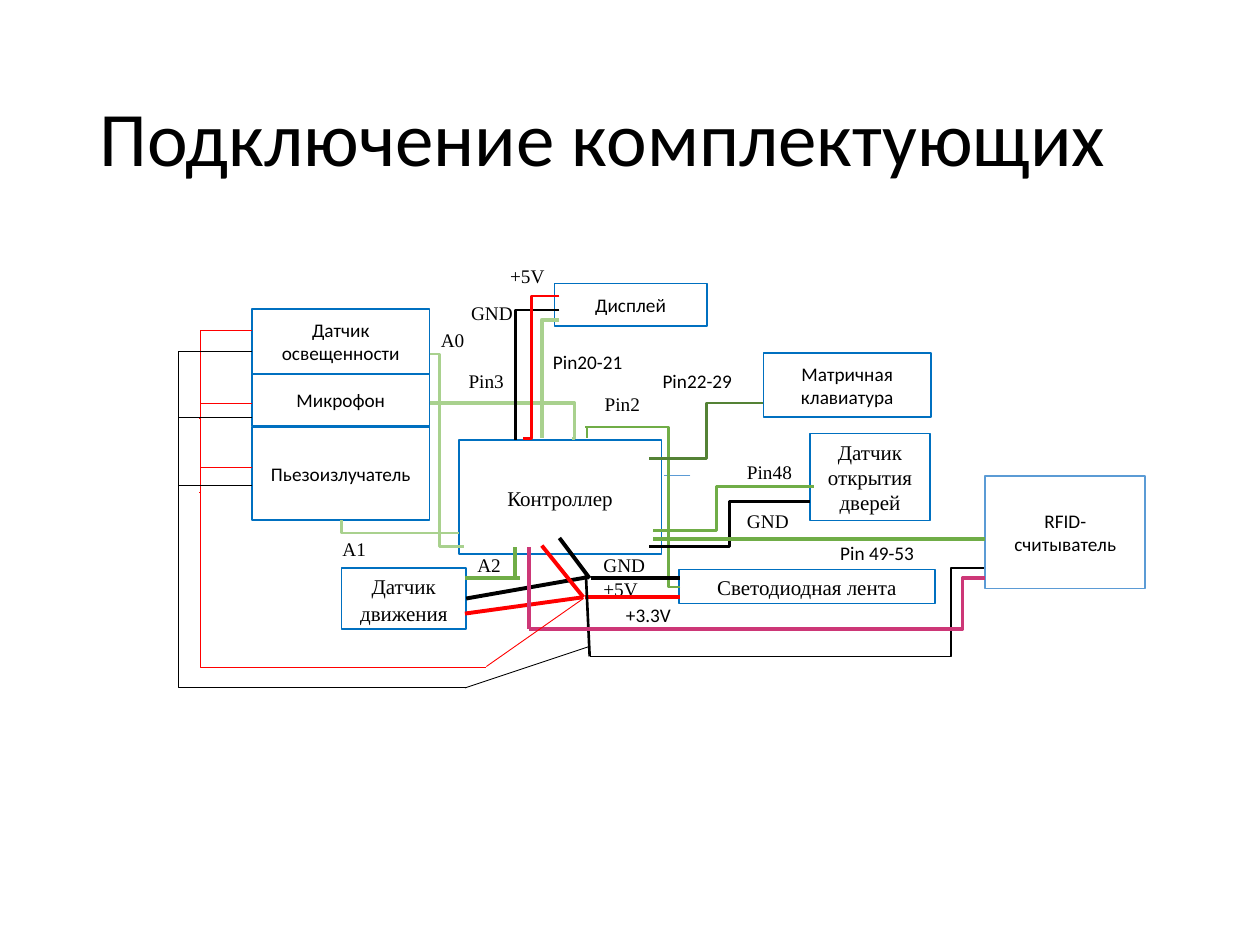
from dataclasses import dataclass

from lxml import etree
from pptx import Presentation
from pptx.dml.color import RGBColor
from pptx.enum.shapes import MSO_CONNECTOR, MSO_SHAPE
from pptx.enum.text import MSO_ANCHOR, MSO_AUTO_SIZE, PP_ALIGN
from pptx.oxml.ns import qn
from pptx.util import Inches, Pt

STRAIGHT, ELBOW = MSO_CONNECTOR.STRAIGHT, MSO_CONNECTOR.ELBOW
RECTANGLE = MSO_SHAPE.RECTANGLE
MIDDLE, TOP = MSO_ANCHOR.MIDDLE, MSO_ANCHOR.TOP
LEFT, CENTER = PP_ALIGN.LEFT, PP_ALIGN.CENTER
NO_AUTOFIT = MSO_AUTO_SIZE.NONE
RIGHT_SIDE = 3
COLUMNS, ROWS = 100, 75


@dataclass(frozen=True)
class Theme:
    """Colours, fonts and type sizes of the wiring diagram."""
    sans: str = "Calibri"
    serif: str = "Times New Roman"
    title: float = 44
    large: float = 12
    small: float = 11
    black: str = "000000"
    white: str = "FFFFFF"
    red: str = "FF0000"
    pink: str = "CD3777"
    green: str = "70AD47"
    light_green: str = "A9D18E"
    dark_green: str = "548235"
    blue: str = "0070C0"
    pale_blue: str = "5B9BD5"


THEME = Theme()
SANS, SERIF = THEME.sans, THEME.serif
LARGE, SMALL = THEME.large, THEME.small
BLACK, RED, PINK = THEME.black, THEME.red, THEME.pink
GREEN, LIGHT, DARK = THEME.green, THEME.light_green, THEME.dark_green

# name, (left, top, width, height), font, size, loose spacing, outline
BOXES = [
    ("Контроллер", (36.4, 34.9, 16.1, 9.1), SERIF, LARGE, True, THEME.blue),
    ("Светодиодная лента", (53.9, 45.2, 20.3, 2.7), SERIF, LARGE, True, THEME.blue),
    ("Датчик движения", (27.1, 45.1, 9.9, 4.8), SERIF, LARGE, True, THEME.blue),
    ("Датчик открытия дверей", (64.3, 34.4, 9.5, 6.9), SERIF, LARGE, False, THEME.blue),
    ("RFID-считыватель", (78.2, 37.8, 12.7, 8.9), SANS, SMALL, False, THEME.pale_blue),
    ("Матричная клавиатура", (60.6, 28, 13.3, 5.1), SANS, SMALL, False, THEME.blue),
    ("Микрофон", (20, 29.7, 14.1, 4.1), SANS, SMALL, False, THEME.blue),
    ("Пьезоизлучатель", (20, 33.9, 14.1, 7.4), SANS, SMALL, False, THEME.blue),
    ("Датчик освещенности", (20, 24.5, 14.1, 5.2), SANS, SMALL, False, THEME.blue),
    ("Дисплей", (44, 22.5, 12.1, 3.4), SANS, SMALL, False, THEME.blue),
]

LABELS = [
    ("Pin2", (47, 30.5, 6.1, 2.7), SERIF, True),
    ("GND", (46.9, 43.3, 6.1, 2.7), SERIF, True),
    ("+5V", (46.9, 45.2, 5, 2.7), SERIF, True),
    ("A2", (36.9, 43.3, 4.6, 2.7), SERIF, True),
    ("A1", (26.2, 42, 4.6, 2.7), SERIF, True),
    ("A0", (34, 25.4, 4.6, 2.7), SERIF, True),
    ("GND", (58.3, 39.9, 5.9, 3), SERIF, False),
    ("Pin48", (58.3, 36, 6.7, 3.8), SERIF, False),
    ("Pin 49-53", (65.7, 42.5, 8.4, 2.7), SANS, False),
    ("+3.3V", (48.7, 47.4, 13, 4.2), SANS, False),
    ("Pin22-29", (51.6, 28.8, 10.2, 3.1), SANS, False),
    ("Pin3", (36.2, 28.8, 6.1, 2.7), SERIF, False),
    ("Pin20-21", (42.9, 27.3, 9.5, 3.5), SANS, False),
    ("+5V", (39.5, 20.5, 5, 2.7), SERIF, False),
    ("GND", (36.4, 23.4, 6.1, 2.7), SERIF, False),
]

WIRES = [
    ((54.8, 37.7), (52.7, 37.7), THEME.pale_blue, 0.5, None),
    ((46.6, 33.9), (46.6, 34.8), GREEN, 1.5, None),
    ((44.4, 42.7), (46.8, 45.9), BLACK, 2.25, None),
    ((54, 46.6), (46.4, 33.9), GREEN, 1.5, 53.07),
    ((43, 43.3), (46.3, 47.4), RED, 2.25, None),
    ((46.9, 45.9), (54, 45.9), BLACK, 2.25, None),
    ((46.4, 47.4), (54, 47.4), RED, 2.25, None),
    ((36.9, 48.7), (46.3, 47.4), RED, 2.25, None),
    ((36.9, 45.9), (41.3, 45.9), GREEN, 2.25, None),
    ((64.3, 39.8), (51.5, 43.4), BLACK, 1.5, 57.9),
    ((64.6, 38.6), (51.8, 42.1), GREEN, 1.5, 56.9),
    ((40.9, 45.9), (40.9, 43.4), GREEN, 2.25, None),
    ((78.2, 42.8), (51.8, 42.8), GREEN, 2.25, None),
    ((78.1, 45.1), (46.8, 52.1), BLACK, 1, 75.5),
    ((46.8, 52.1), (46.5, 45.6), BLACK, 1.5, None),
    ((78.2, 45.9), (42, 49.9), PINK, 2.25, 76.4),
    ((42, 49.9), (42, 43.4), PINK, 2.25, None),
    ((60.6, 32), (51.5, 36.4), DARK, 1.5, 56.1),
    ((20, 37.1), (38.6, 53), RED, 0.5, 15.9),
    ((20, 32), (15.8, 39.1), RED, 0.5, 15.9),
    ((20, 26.2), (15.8, 33.2), RED, 0.5, 15.9),
    ((38.6, 52.9), (46.3, 47.5), RED, 0.5, None),
    ((20, 38.5), (37, 54.6), BLACK, 0.5, 14.2),
    ((20, 33.1), (14.2, 40.7), BLACK, 0.5, 14.2),
    ((20, 27.9), (14.2, 34.9), BLACK, 0.5, 14.2),
    ((36.9, 54.6), (46.8, 51.3), BLACK, 0.5, None),
    ((34.1, 32), (45.4, 34.8), LIGHT, 2.25, 45.6),
    ((34.1, 28.1), (36.8, 43.4), LIGHT, 1.5, 34.9),
    ((27.1, 41.3), (36.4, 42.3), LIGHT, 1.5, 27.1),
    ((44.4, 25.4), (43, 34.8), LIGHT, 2.25, 43),
    ((44.4, 24.6), (40.9, 34.9), BLACK, 1.5, 40.9),
    ((44.4, 23.5), (41.5, 34.8), RED, 1.5, 42.2),
]


def place(deck, *cells):
    """Turn alternating columns and rows into lengths on the slide."""
    steps = (deck.slide_width / COLUMNS, deck.slide_height / ROWS)
    return [round(cell * steps[index % 2]) for index, cell in enumerate(cells)]


def write(shape, words, font, size, align, anchor, loose=False):
    """Put one formatted paragraph in a shape."""
    frame = shape.text_frame
    frame.word_wrap = True
    frame.auto_size = NO_AUTOFIT
    frame.vertical_anchor = anchor
    para = frame.paragraphs[0]
    para.text = words
    para.alignment = align
    para.font.name = font
    para.font.size = Pt(size)
    para.font.color.rgb = RGBColor.from_string(BLACK)
    if loose:
        para.line_spacing = 1.07
        para.space_after = Pt(8)
    return para


def add_title(deck, page, words):
    """Move and format the title placeholder."""
    title = page.shapes.title
    title.left, title.top, title.width, title.height = place(deck, 6.9, 4, 86.2, 14.5)
    write(title, words, SANS, THEME.title, LEFT, MIDDLE).line_spacing = 0.9


def add_box(deck, page, name, cells, font, size, loose, outline):
    """Draw an outlined component with its centred name."""
    box = page.shapes.add_shape(RECTANGLE, *place(deck, *cells))
    box.shadow.inherit = False
    box.fill.solid()
    box.fill.fore_color.rgb = RGBColor.from_string(THEME.white)
    box.line.color.rgb = RGBColor.from_string(outline)
    box.line.width = Pt(1)
    write(box, name, font, size, CENTER, MIDDLE, loose)
    return box


def add_label(deck, page, words, cells, font, loose):
    """Write the name of a pin or a supply line."""
    label = page.shapes.add_textbox(*place(deck, *cells))
    write(label, words, font, SMALL, LEFT, TOP, loose)


def add_wire(deck, page, start, end, colour, width, bend=None):
    """Draw a straight wire, or an elbow that turns at the bend column."""
    kind = STRAIGHT if bend is None else ELBOW
    wire = page.shapes.add_connector(kind, *place(deck, *start, *end))
    wire.line.color.rgb = RGBColor.from_string(colour)
    wire.line.width = Pt(width)
    properties = wire._element.spPr
    etree.SubElement(properties, qn("a:effectLst"))
    if bend is not None:
        share = round((bend - start[0]) / (end[0] - start[0]) * 100000)
        guides = properties.find(qn("a:prstGeom")).find(qn("a:avLst"))
        etree.SubElement(guides, qn("a:gd"), name="adj1", fmla=f"val {share}")
    return wire


def main():
    """Build the wiring slide and save it."""
    deck = Presentation()
    deck.slide_width, deck.slide_height = Inches(10), Inches(7.5)
    page = deck.slides.add_slide(deck.slide_layouts[5])
    add_title(deck, page, "Подключение комплектующих")
    boxes = {row[0]: add_box(deck, page, *row) for row in BOXES}
    for row in LABELS:
        add_label(deck, page, *row)
    ground = add_wire(deck, page, (37, 47.5), (46.7, 45.8), BLACK, 2.25)
    ground.begin_connect(boxes["Датчик движения"], RIGHT_SIDE)
    for row in WIRES:
        add_wire(deck, page, *row)
    deck.save("out.pptx")


if __name__ == "__main__":
    main()
